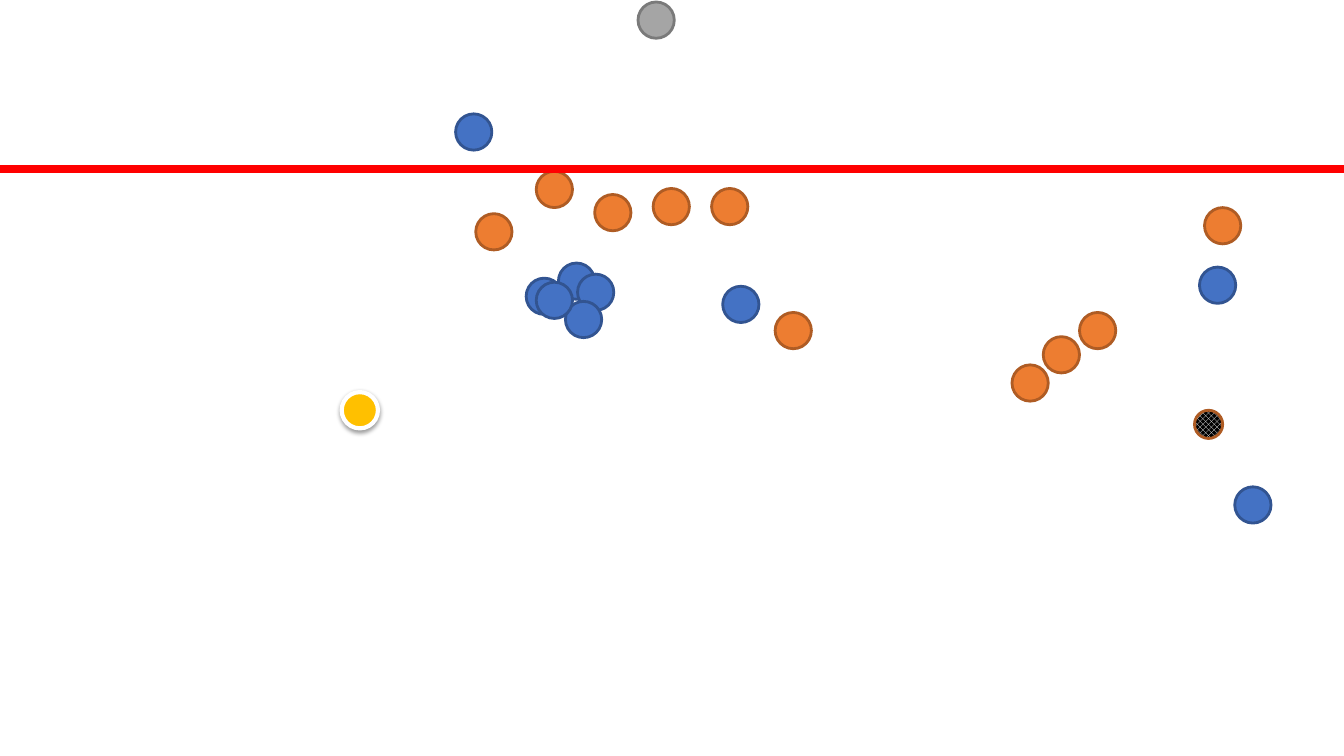
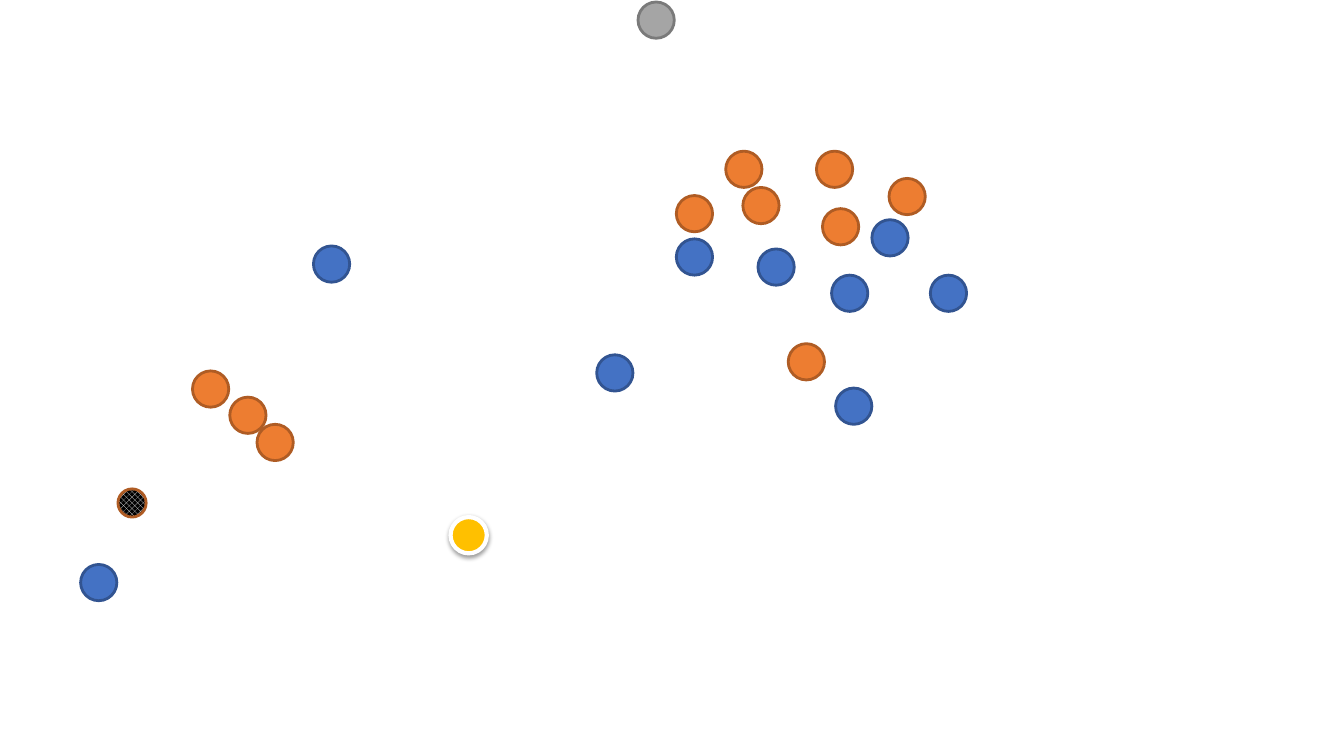
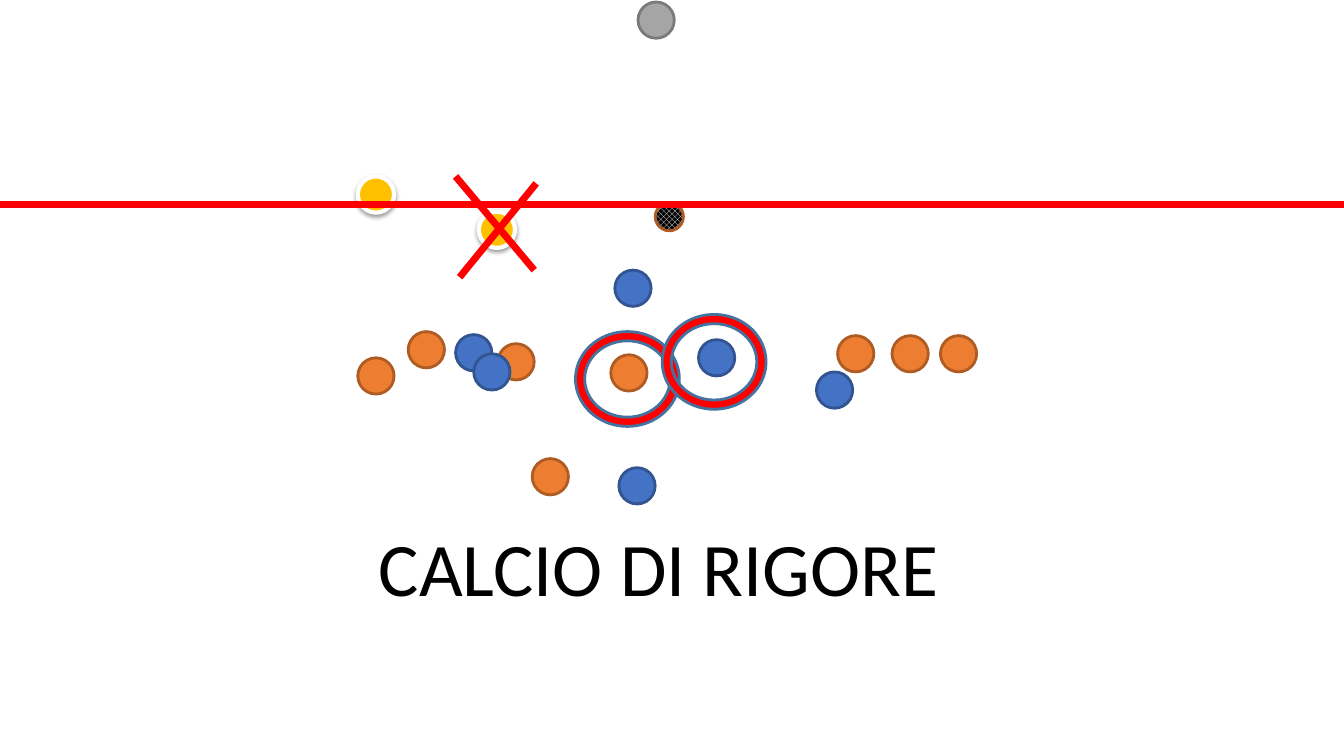
"""Build three rugby diagrams: players, referee, ball and offside line."""
from lxml.etree import SubElement
from pptx import Presentation
from pptx.dml.color import RGBColor
from pptx.enum.dml import MSO_PATTERN as Pattern
from pptx.enum.shapes import MSO_CONNECTOR as Link, MSO_SHAPE as Shape
from pptx.enum.text import MSO_AUTO_SIZE as Fit, PP_ALIGN as Align
from pptx.oxml.ns import qn
from pptx.util import Emu, Pt

PX = 9144
WIDTH, HEIGHT = 12192000, 6858000
RED = "FF0000"
DOT, BALL = 36, 28
RING = (103, 94)
STYLE = {
    "orange": ("ED7D31", "AF5C24", 2),
    "blue": ("4472C4", "325491", 2),
    "grey": ("A5A5A5", "7A7A7A", 2),
    "gold": ("FFC000", "FFFFFF", 3),
    "ring": (RED, "43739E", 2),
}
POST = (633, 2)

PLAYS = [
    {
        "orange": [(1071, 310), (1035, 334), (1004, 362), (1195, 206), (648, 187),
                   (532, 170), (706, 187), (769, 310), (590, 193), (472, 212)],
        "blue": [(1190, 265), (554, 261), (522, 276), (717, 284), (573, 272),
                 (561, 299), (532, 280), (1225, 483), (452, 113)],
        "gold": [(339, 389)],
        "ball": (1185, 407),
        "line": 168,
    },
    {
        "orange": [(671, 194), (191, 368), (255, 421), (737, 186), (782, 341),
                   (810, 150), (816, 207), (228, 394), (720, 150), (882, 177)],
        "blue": [(592, 352), (825, 273), (865, 218), (829, 385), (752, 247),
                 (923, 273), (671, 237), (80, 560), (311, 244)],
        "gold": [(447, 513)],
        "ball": (117, 485),
    },
    {
        "orange": [(885, 333), (831, 333), (528, 455), (494, 341), (405, 329),
                   (355, 355), (933, 333), (606, 352)],
        "blue": [(452, 332), (614, 464), (470, 351), (810, 369), (693, 337),
                 (610, 268)],
        "gold": [(355, 175)],
        "ball": (650, 201),
        "rings": [(571, 329), (657, 312)],
        "line": 203,
        "title": "CALCIO DI RIGORE",
        "wrong": (475, 210),
        "cross": [(452, 175, 530, 268), (532, 182, 456, 275)],
    },
]


def px(*nums):
    return [Emu(n * PX) for n in nums]


def rgb(code):
    return RGBColor.from_string(code)


def mark(slide, kind, spot, size=(DOT, DOT), form=Shape.OVAL):
    fill, edge, wide = STYLE[kind]
    shape = slide.shapes.add_shape(form, *px(*spot, *size))
    shape.shadow.inherit = False
    shape.fill.solid()
    shape.fill.fore_color.rgb = rgb(fill)
    shape.line.color.rgb = rgb(edge)
    shape.line.width = Pt(wide)
    return shape


def glow(shape):
    list_el = shape.element.spPr.find(qn("a:effectLst"))
    shade = SubElement(list_el, qn("a:outerShdw"), blurRad="40000", dist="20000",
                       dir="5400000", rotWithShape="0")
    tint = SubElement(shade, qn("a:srgbClr"), val="000000")
    SubElement(tint, qn("a:alpha"), val="38000")


def ball(slide, spot):
    fill = mark(slide, "orange", spot, (BALL, BALL)).fill
    fill.patterned()
    fill.pattern = Pattern.OUTLINED_DIAMOND
    fill.fore_color.rgb = rgb("FFFFFF")
    fill.back_color.rgb = rgb("000000")


def stroke(slide, ends, wide):
    line = slide.shapes.add_connector(Link.STRAIGHT, *ends)
    line.line.color.rgb = rgb(RED)
    line.line.width = Pt(wide)
    SubElement(line.element.spPr, qn("a:effectLst"))


def title(slide, words):
    frame = slide.shapes.add_textbox(*px(97, 512, 1113, 100)).text_frame
    frame.word_wrap = True
    frame.auto_size = Fit.SHAPE_TO_FIT_TEXT
    para = frame.paragraphs[0]
    para.text = words
    para.alignment = Align.CENTER
    para.font.name = "Calibri"
    para.font.size = Pt(54)
    para.font.color.rgb = rgb("000000")


def draw(slide, play):
    mark(slide, "grey", POST)
    for kind in ("orange", "blue"):
        for spot in play[kind]:
            mark(slide, kind, spot)
    for spot in play["gold"]:
        glow(mark(slide, "gold", spot))
    ball(slide, play["ball"])
    for spot in play.get("rings", []):
        mark(slide, "ring", spot, RING, Shape.DONUT).adjustments[0] = 0.097
    if "line" in play:
        high = play["line"] * PX
        stroke(slide, (0, high, WIDTH, high), 5.5)
    if "title" in play:
        title(slide, play["title"])
    if "wrong" in play:
        glow(mark(slide, "gold", play["wrong"]))
    for ends in play.get("cross", []):
        stroke(slide, px(*ends), 5)


def main():
    deck = Presentation()
    deck.slide_width, deck.slide_height = WIDTH, HEIGHT
    for play in PLAYS:
        draw(deck.slides.add_slide(deck.slide_layouts[6]), play)
    deck.save("out.pptx")


if __name__ == "__main__":
    main()
